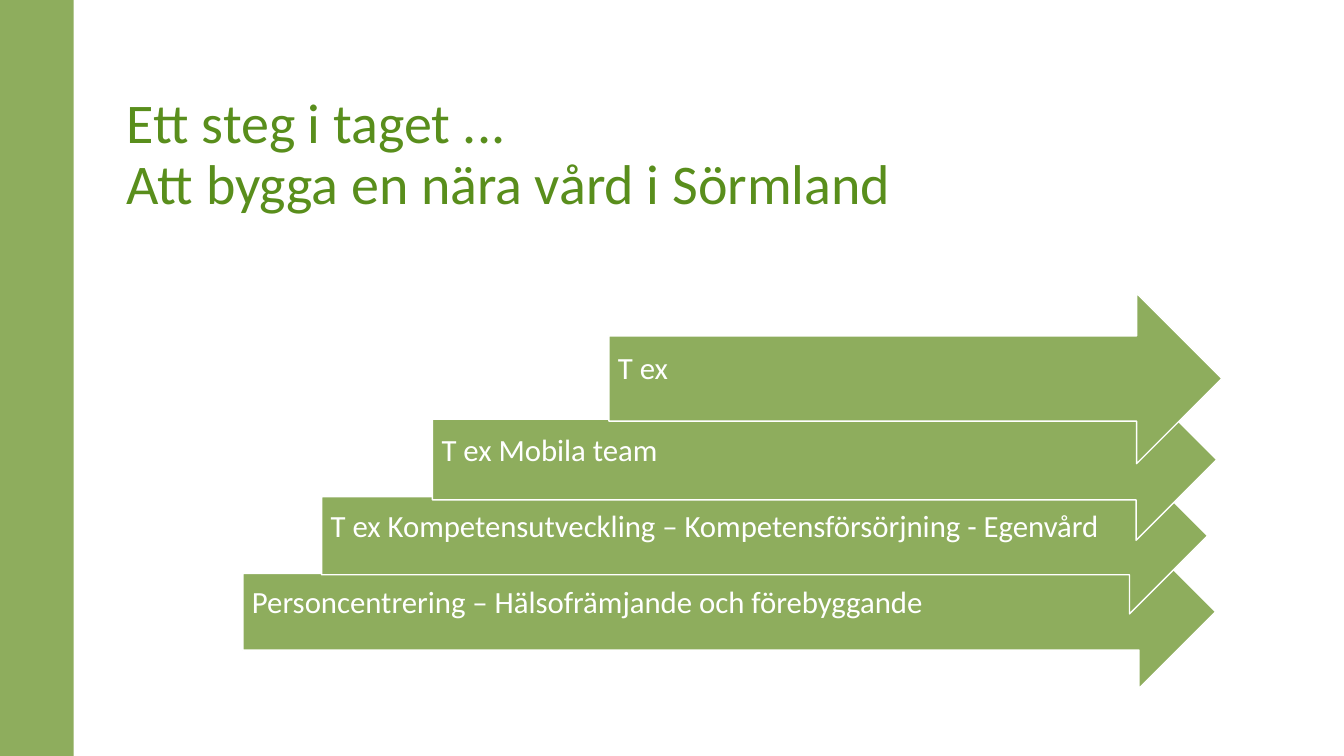
from pptx import Presentation
from pptx.dml.color import RGBColor
from pptx.enum.shapes import MSO_SHAPE
from pptx.enum.text import MSO_ANCHOR, MSO_AUTO_SIZE, PP_ALIGN
from pptx.util import Pt

RECTANGLE, RIGHT_ARROW = MSO_SHAPE.RECTANGLE, MSO_SHAPE.RIGHT_ARROW
MIDDLE, LEFT, NO_FIT = MSO_ANCHOR.MIDDLE, PP_ALIGN.LEFT, MSO_AUTO_SIZE.NONE

TITLE_LINES = ["Ett steg i taget ...", "Att bygga en nära vård i Sörmland"]
# text, left, top, width, height; from the lowest step to the highest
STEPS = [
    ("Personcentrering – Hälsofrämjande och förebyggande", 173.5, 382.3, 694.8, 109.4),
    ("T ex Kompetensutveckling – Kompetensförsörjning - Egenvård", 229.7, 326.9, 632.9, 111.6),
    ("T ex Mobila team", 308.9, 270.7, 560.2, 115.2),
    ("T ex", 434.9, 209.5, 437.8, 121.7),
]
COLORS = {"green": "8EAD5D", "title": "598E1C", "white": "FFFFFF"}
FONT = "Calibri"
SLIDE_WIDTH, SLIDE_HEIGHT, BAR_WIDTH = 960, 540, 52.6


def color(name):
    return RGBColor.from_string(COLORS[name])


def format_text(frame, size, color_name):
    frame.auto_size = NO_FIT
    frame.word_wrap = True
    frame.vertical_anchor = MIDDLE
    para = frame.paragraphs[0]
    para.alignment = LEFT
    para.line_spacing = 0.9
    for span in para.runs:
        span.font.name = FONT
        span.font.size = Pt(size)
        span.font.color.rgb = color(color_name)


def add_green_shape(slide, kind, left, top, width, height):
    shape = slide.shapes.add_shape(kind, Pt(left), Pt(top), Pt(width), Pt(height))
    shape.shadow.inherit = False
    shape.fill.solid()
    shape.fill.fore_color.rgb = color("green")
    return shape


def add_step(slide, text, left, top, width, height):
    arrow = add_green_shape(slide, RIGHT_ARROW, left, top, width, height)
    arrow.line.color.rgb = color("white")
    arrow.line.width = Pt(1)
    frame = arrow.text_frame
    frame.margin_left = frame.margin_top = Pt(6.5)
    frame.margin_right, frame.margin_bottom = Pt(20), Pt(18.7)
    frame.text = text
    format_text(frame, 22, "white")


def main():
    deck = Presentation()
    deck.slide_width, deck.slide_height = Pt(SLIDE_WIDTH), Pt(SLIDE_HEIGHT)
    slide = deck.slides.add_slide(deck.slide_layouts[5])

    bar = add_green_shape(slide, RECTANGLE, 0, 0, BAR_WIDTH, SLIDE_HEIGHT)
    bar.line.fill.background()

    title = slide.shapes.title
    title.left, title.top, title.width, title.height = Pt(83.5), Pt(79.2), Pt(822.2), Pt(64)
    title.text_frame.text = "\v".join(TITLE_LINES)
    format_text(title.text_frame, 40, "title")

    for step in STEPS:
        add_step(slide, *step)

    deck.save("out.pptx")


if __name__ == "__main__":
    main()
